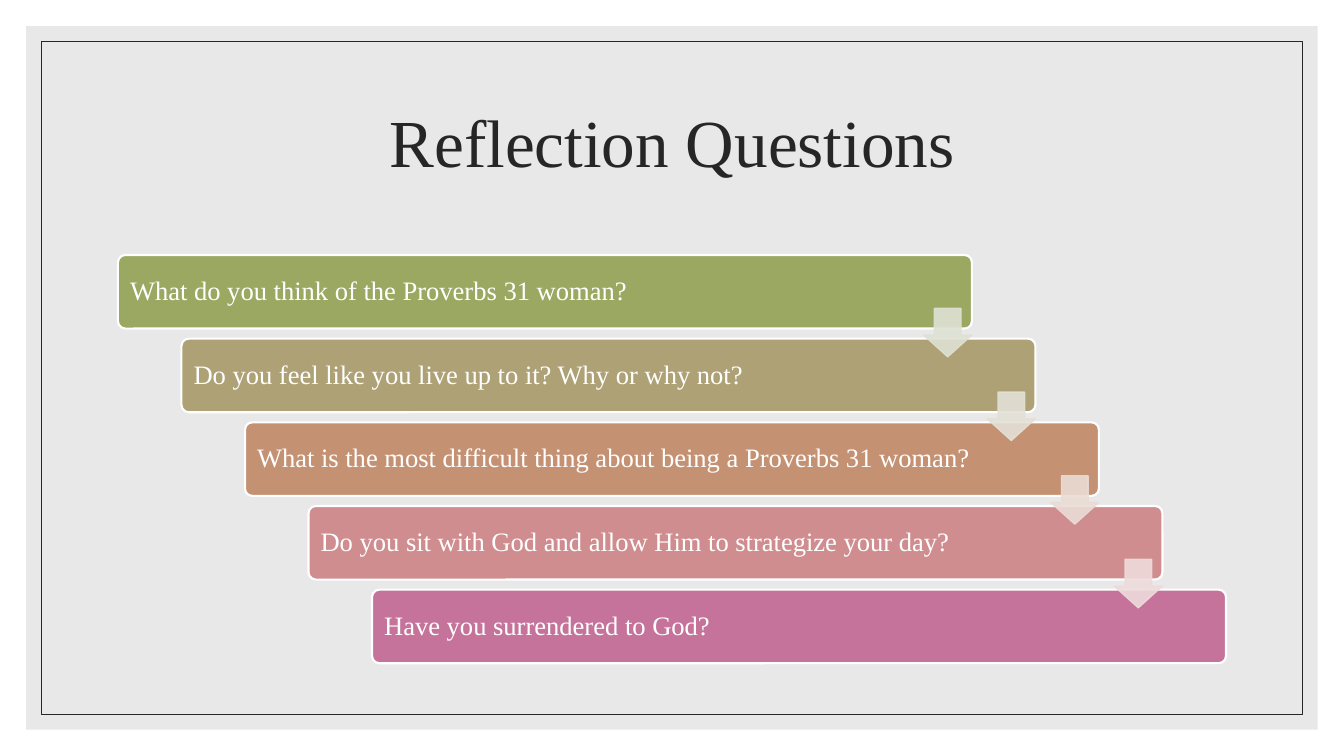
from lxml.etree import SubElement
from pptx import Presentation
from pptx.dml.color import RGBColor
from pptx.enum.shapes import MSO_SHAPE
from pptx.enum.text import MSO_ANCHOR, PP_ALIGN
from pptx.oxml.ns import qn
from pptx.util import Inches, Pt

# Content
TITLE = "Reflection Questions"
WHITE = RGBColor(0xFF, 0xFF, 0xFF)
GREY = RGBColor(0xD9, 0xD9, 0xD9)
DARK = RGBColor(0x26, 0x26, 0x26)
FONT = "Times New Roman"

# Question, bar colour, colour of the arrow to the next bar
STEPS = [
    ("What do you think of the Proverbs 31 woman?",
     RGBColor(0x9A, 0xA8, 0x62), RGBColor(0xDE, 0xE1, 0xD3)),
    ("Do you feel like you live up to it? Why or why not?",
     RGBColor(0xAD, 0xA1, 0x75), RGBColor(0xE3, 0xE0, 0xD6)),
    ("What is the most difficult thing about being a Proverbs 31 woman?",
     RGBColor(0xC5, 0x91, 0x73), RGBColor(0xEA, 0xDC, 0xD5)),
    ("Do you sit with God and allow Him to strategize your day?",
     RGBColor(0xD0, 0x8D, 0x90), RGBColor(0xEE, 0xDB, 0xDB)),
    ("Have you surrendered to God?", RGBColor(0xC5, 0x73, 0x9A), None),
]

# Layout in inches
WIDE, HIGH = 13.33, 7.5
LEFT, TOP = 1.17, 2.53
BAR_W, BAR_H = 8.47, 0.73
STEP_X, STEP_Y = 0.63, 0.83
ARROW, DROP = 0.48, 0.53

deck = Presentation()
deck.slide_width, deck.slide_height = Inches(WIDE), Inches(HIGH)
slide = deck.slides.add_slide(deck.slide_layouts[6])


def fade(fill, percent):
    """Set the opacity of a solid fill."""
    color = fill._xPr.find(qn("a:solidFill"))[0]
    SubElement(color, qn("a:alpha")).set("val", str(percent * 1000))


def draw(kind, box, fill=None, line=None, width=1, alpha=100):
    shape = slide.shapes.add_shape(kind, *map(Inches, box))
    shape.shadow.inherit = False
    for part, color in ((shape.fill, fill), (shape.line.fill, line)):
        if color is None:
            part.background()
            continue
        part.solid()
        part.fore_color.rgb = color
        if alpha < 100:
            fade(part, alpha)
    if line is not None:
        shape.line.width = Pt(width)
    return shape


def write(shape, text, size, color, align, inset):
    frame = shape.text_frame
    frame.word_wrap = True
    frame.vertical_anchor = MSO_ANCHOR.MIDDLE
    frame.margin_left = frame.margin_right = Inches(inset)
    para = frame.paragraphs[0]
    para.alignment = align
    para.line_spacing = 0.9
    run = para.add_run()
    run.text = text
    run.font.name = FONT
    run.font.size = Pt(size)
    run.font.color.rgb = color


# Panel and frame
for gap, fill, line, alpha in ((0, WHITE, None, 100), (0.26, GREY, None, 60),
                               (0.41, None, DARK, 100)):
    box = (gap, gap, WIDE - 2 * gap, HIGH - 2 * gap)
    draw(MSO_SHAPE.RECTANGLE, box, fill, line, 0.5, alpha)

# Title
title = slide.shapes.add_textbox(*map(Inches, (LEFT, 0.7, 11, 1.5)))
write(title, TITLE, 48, DARK, PP_ALIGN.CENTER, 0.1)

# Staircase of questions
for i, (text, fill, _) in enumerate(STEPS):
    box = (LEFT + i * STEP_X, TOP + i * STEP_Y, BAR_W, BAR_H)
    bar = draw(MSO_SHAPE.ROUNDED_RECTANGLE, box, fill, WHITE, 1.5)
    bar.adjustments[0] = 0.1
    write(bar, text, 19, WHITE, PP_ALIGN.LEFT, 0.1)

# Arrows at the right end of each bar, over the bars
for i, (_, _, tint) in enumerate(STEPS[:-1]):
    box = (LEFT + BAR_W - ARROW + i * STEP_X, TOP + DROP + i * STEP_Y,
           ARROW, ARROW)
    arrow = draw(MSO_SHAPE.DOWN_ARROW, box, tint, tint, 1, 90)
    arrow.adjustments[0], arrow.adjustments[1] = 0.55, 0.45

deck.save("out.pptx")
